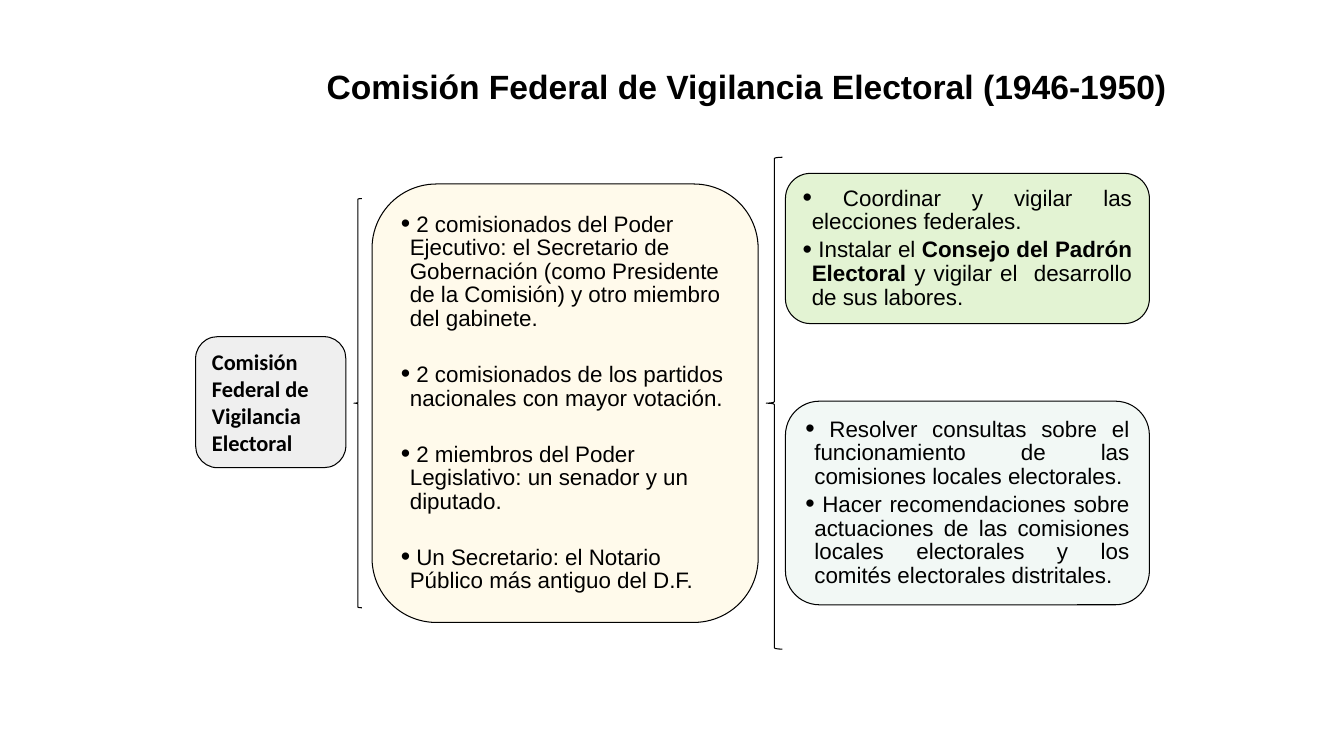
"""Build the slide on the Comisión Federal de Vigilancia Electoral."""
from dataclasses import dataclass

from lxml import etree
from pptx import Presentation
from pptx.dml.color import RGBColor
from pptx.enum import shapes, text
from pptx.oxml import ns
from pptx.util import Inches, Pt

TITLE = "Comisión Federal de Vigilancia Electoral (1946-1950)"
BODY = "Comisión Federal de Vigilancia Electoral"
MEMBERS = [
    [" 2 comisionados del Poder Ejecutivo: el Secretario de Gobernación "
     "(como Presidente de la Comisión) y otro miembro del gabinete."],
    [" 2 comisionados de los partidos nacionales con mayor votación."],
    [" 2 miembros del Poder Legislativo: un senador y un diputado."],
    [" Un Secretario: el Notario Público más antiguo del D.F."],
]
DUTIES = [
    [" Coordinar y vigilar las elecciones federales."],
    [" Instalar el ", "Consejo del Padrón Electoral",
     " y vigilar el  desarrollo de sus labores."],
]
ADVICE = [
    [" Resolver consultas sobre el funcionamiento de las comisiones "
     "locales electorales."],
    [" Hacer recomendaciones sobre actuaciones de las comisiones locales "
     "electorales y los comités electorales distritales."],
]


@dataclass(frozen=True)
class Theme:
    """Hold colours, fonts and sizes."""
    ink: str = "000000"
    gray: tuple = ("B3B3B3", 20)
    gold: tuple = ("FFC000", 8)
    green: tuple = ("92D050", 25)
    teal: tuple = ("008040", 5)
    sans: str = "Arial"
    label: str = "Calibri"
    head: float = 24
    size: float = 16
    lead: float = 16.8
    gap: float = 3.2
    rule: float = 0.75


THEME = Theme()
WIDE, HIGH = 13.33, 7.5
MID = 4.0
RIGHT, SPAN = 7.79, 3.61
LEFT, JUST = text.PP_ALIGN.LEFT, text.PP_ALIGN.JUSTIFY
BOXES = [
    (1.94, 3.34, 1.49, 1.3, THEME.gray),
    (3.69, MID - 4.35 / 2, 3.83, 4.35, THEME.gold),
    (RIGHT, 1.72, SPAN, 1.49, THEME.green),
    (RIGHT, 3.98, SPAN, 2.02, THEME.teal),
]
LISTS = [
    (MEMBERS, LEFT, THEME.lead + 2 * THEME.gap),
    (DUTIES, JUST, THEME.gap),
    (ADVICE, JUST, THEME.gap),
]
BRACES = [(3.51, 0.08, 4.06), (7.6, 0.16, 4.88)]


def style(para, face, size, bold, align):
    """Format one paragraph."""
    font = para.font
    font.name, font.size, font.bold = face, Pt(size), bold
    font.color.rgb = RGBColor.from_string(THEME.ink)
    para.alignment = align


def draw(slide, kind, x, y, w, h):
    """Add one thinly outlined shape."""
    shape = slide.shapes.add_shape(kind, *map(Inches, (x, y, w, h)))
    shape.shadow.inherit = False
    shape.line.color.rgb = RGBColor.from_string(THEME.ink)
    shape.line.width = Pt(THEME.rule)
    return shape


def tint(shape, color, share):
    """Fill a shape with a partly clear colour."""
    shape.fill.solid()
    shape.fill.fore_color.rgb = RGBColor.from_string(color)
    node = shape.fill._xPr.find(".//" + ns.qn("a:srgbClr"))
    etree.SubElement(node, ns.qn("a:alpha"), val=str(share * 1000))


def bullet(para):
    """Give a paragraph a hanging bullet."""
    props = para._p.get_or_add_pPr()
    props.set("marL", str(Inches(0.09)))
    props.set("indent", str(Inches(-0.09)))
    color = etree.SubElement(props, ns.qn("a:buClr"))
    etree.SubElement(color, ns.qn("a:srgbClr"), val=THEME.ink)
    etree.SubElement(props, ns.qn("a:buSzPct"), val="120000")
    etree.SubElement(props, ns.qn("a:buFont"), typeface=THEME.sans)
    etree.SubElement(props, ns.qn("a:buChar"), char="•")


def fill_list(frame, items, align, gap):
    """Write bulleted items, with every second run bold."""
    for i, parts in enumerate(items):
        para = frame.add_paragraph() if i else frame.paragraphs[0]
        bullet(para)
        para.line_spacing = Pt(THEME.lead)
        para.space_before = Pt(gap if i else 0)
        style(para, THEME.sans, THEME.size, False, align)
        for j, part in enumerate(parts):
            run = para.add_run()
            run.text = part
            if j % 2:
                run.font.bold = True


def main():
    """Compose and save the slide."""
    deck = Presentation()
    deck.slide_width, deck.slide_height = Inches(WIDE), Inches(HIGH)
    slide = deck.slides.add_slide(deck.slide_layouts[5])

    title = slide.shapes.title
    title.left, title.top = Inches(2.93), Inches(0.6)
    title.width, title.height = Inches(8.74), Inches(0.51)
    title.text = TITLE
    title.text_frame.auto_size = text.MSO_AUTO_SIZE.NONE
    title.text_frame.vertical_anchor = text.MSO_ANCHOR.MIDDLE
    style(title.text_frame.paragraphs[0], THEME.sans, THEME.head, True,
          text.PP_ALIGN.RIGHT)

    frames = []
    for *place, color in BOXES:
        box = draw(slide, shapes.MSO_SHAPE.ROUNDED_RECTANGLE, *place)
        tint(box, *color)
        box.text_frame.word_wrap = True
        box.text_frame.vertical_anchor = text.MSO_ANCHOR.MIDDLE
        frames.append(box.text_frame)

    frames[0].text = BODY
    style(frames[0].paragraphs[0], THEME.label, THEME.size, True, LEFT)
    for frame, content in zip(frames[1:], LISTS):
        fill_list(frame, *content)

    for x, w, h in BRACES:
        brace = draw(slide, shapes.MSO_SHAPE.LEFT_BRACE, x, MID - h / 2, w, h)
        brace.fill.background()
        brace.adjustments[0] = 0.08

    deck.save("out.pptx")


if __name__ == "__main__":
    main()
